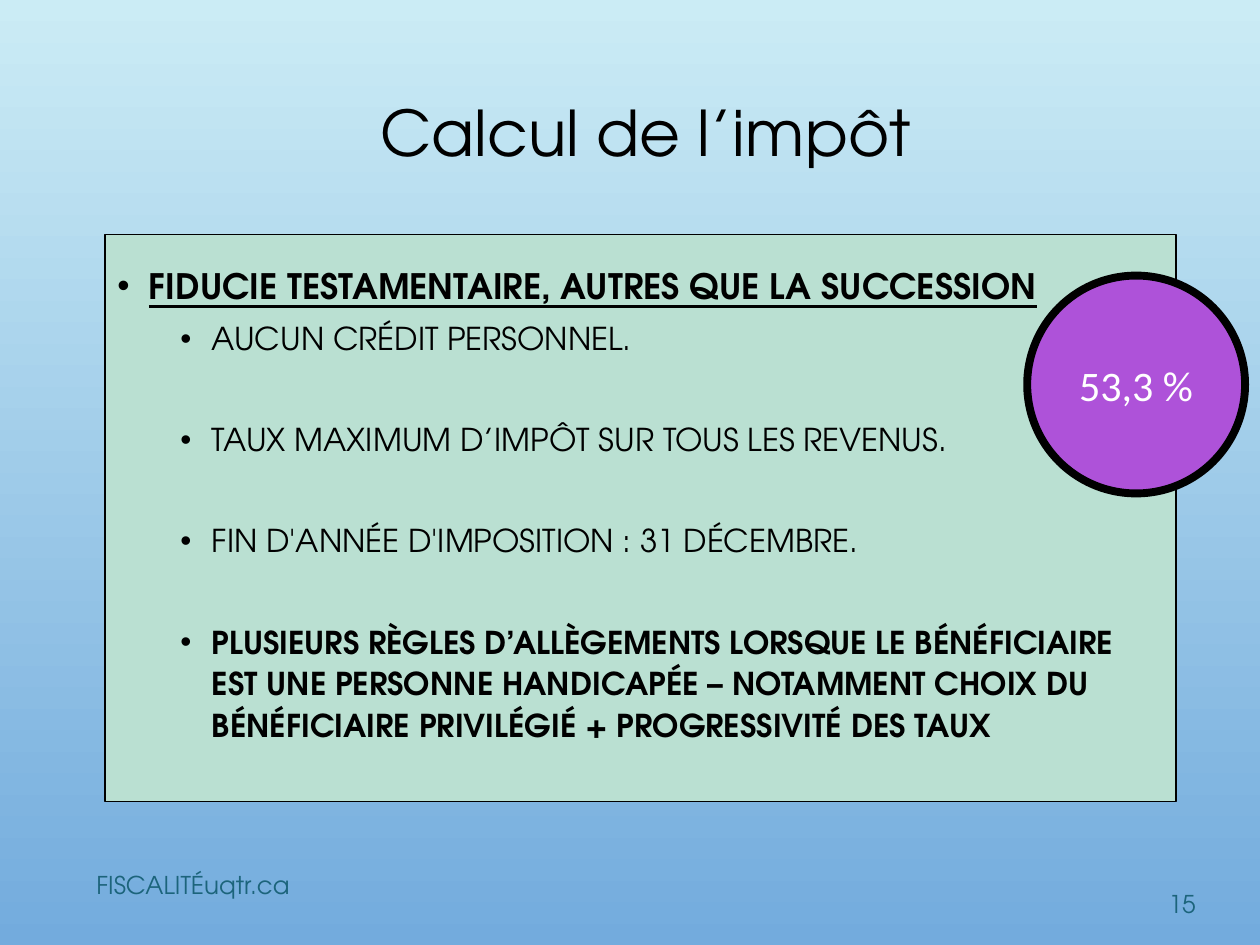
import pptx
import pptx.dml.color
import pptx.enum.shapes
import pptx.enum.text
import pptx.oxml
import pptx.oxml.ns
import pptx.util
from pptx.util import Pt

FONT = "TeX Gyre Adventor"
ALIGN = pptx.enum.text.PP_ALIGN
ANCHOR = pptx.enum.text.MSO_ANCHOR
SHAPES = pptx.enum.shapes.MSO_SHAPE


def rgb(value):
    return pptx.dml.color.RGBColor.from_string(value)


def write(paragraph, text, color, paragraph_format, font_format):
    """Fill a paragraph with one formatted run."""
    run = paragraph.add_run()
    run.text = text
    for name, value in paragraph_format.items():
        setattr(paragraph, name, value)
    for name, value in font_format.items():
        setattr(run.font, name, value)
    run.font.color.rgb = rgb(color)


presentation = pptx.Presentation()
presentation.slide_width, presentation.slide_height = Pt(720), Pt(540)
slide = presentation.slides.add_slide(presentation.slide_layouts[5])

# Background
background = slide.background.fill
background.gradient()
background.gradient_angle = 270
for stop, color in zip(background.gradient_stops, ["CBECF5", "73ABDD"]):
    stop.color.rgb = rgb(color)

# Title
title = slide.shapes.title
title.left, title.top, title.width, title.height = Pt(66), Pt(42), Pt(606), Pt(72)
title.text_frame.vertical_anchor = ANCHOR.MIDDLE
write(title.text_frame.paragraphs[0], "Calcul de l’impôt", "000000",
      {"alignment": ALIGN.CENTER, "line_spacing": 0.9}, {"name": FONT, "size": Pt(36)})

# Rules panel: text, level, space before, font format
rules = [
    ("FIDUCIE TESTAMENTAIRE, AUTRES QUE LA SUCCESSION", 0, 0,
     {"size": Pt(20), "bold": True, "underline": True}),
    ("AUCUN CRÉDIT PERSONNEL.", 1, 5, {"size": Pt(18)}),
    ("TAUX MAXIMUM D’IMPÔT SUR TOUS LES REVENUS.", 1, 34, {"size": Pt(18)}),
    ("FIN D'ANNÉE D'IMPOSITION : 31 DÉCEMBRE.", 1, 34, {"size": Pt(18)}),
    ("PLUSIEURS RÈGLES D’ALLÈGEMENTS LORSQUE LE BÉNÉFICIAIRE EST UNE PERSONNE "
     "HANDICAPÉE – NOTAMMENT CHOIX DU BÉNÉFICIAIRE PRIVILÉGIÉ + PROGRESSIVITÉ DES TAUX",
     1, 34, {"size": Pt(18), "bold": True}),
]
panel = slide.shapes.add_shape(SHAPES.RECTANGLE, Pt(60), Pt(134), Pt(612), Pt(324))
panel.shadow.inherit = False
panel.fill.solid()
panel.fill.fore_color.rgb = rgb("BAE0D2")
panel.line.color.rgb = rgb("000000")
panel.line.width = Pt(0.75)
panel.text_frame.vertical_anchor = ANCHOR.TOP
panel.text_frame.margin_top = Pt(15)
for index, (text, level, space, font_format) in enumerate(rules):
    frame = panel.text_frame
    paragraph = frame.add_paragraph() if index else frame.paragraphs[0]
    properties = paragraph._p.get_or_add_pPr()
    properties.set("marL", str(Pt(18 + 36 * level)))
    properties.set("indent", str(Pt(-18)))
    namespace = pptx.oxml.ns.nsdecls("a")
    for bullet in (f'<a:buClr {namespace}><a:srgbClr val="000000"/></a:buClr>',
                   f'<a:buFont {namespace} typeface="Arial"/>',
                   f'<a:buChar {namespace} char="•"/>'):
        properties.append(pptx.oxml.parse_xml(bullet))
    write(paragraph, text, "000000",
          {"alignment": ALIGN.LEFT, "level": level, "line_spacing": 1.1,
           "space_before": Pt(space)},
          {"name": FONT, **font_format})

# Footer
footer = slide.shapes.add_textbox(Pt(48), Pt(491), Pt(427), Pt(29))
footer.text_frame.word_wrap = True
footer.text_frame.vertical_anchor = ANCHOR.MIDDLE
write(footer.text_frame.paragraphs[0], "FISCALITÉuqtr.ca", "1C647B", {},
      {"name": FONT, "size": Pt(14)})

# Slide number and rate badge
number = slide.shapes.add_shape(SHAPES.OVAL, Pt(661), Pt(502), Pt(29), Pt(29))
number.fill.background()
number.line.fill.background()
number.text_frame.margin_left = number.text_frame.margin_right = Pt(1.5)
badge = slide.shapes.add_shape(SHAPES.OVAL, Pt(587), Pt(157.5), Pt(124.5), Pt(124.5))
badge.fill.solid()
badge.fill.fore_color.rgb = rgb("AE52D9")
badge.line.color.rgb = rgb("000000")
badge.line.width = Pt(4.5)
for shape, text, color, font, size in [(number, "15", "1C647B", FONT, 14),
                                       (badge, "53,3 %", "FFFFFF", "Calibri", 24)]:
    shape.shadow.inherit = False
    shape.text_frame.vertical_anchor = ANCHOR.MIDDLE
    write(shape.text_frame.paragraphs[0], text, color, {"alignment": ALIGN.CENTER},
          {"name": font, "size": Pt(size)})

presentation.save("out.pptx")
